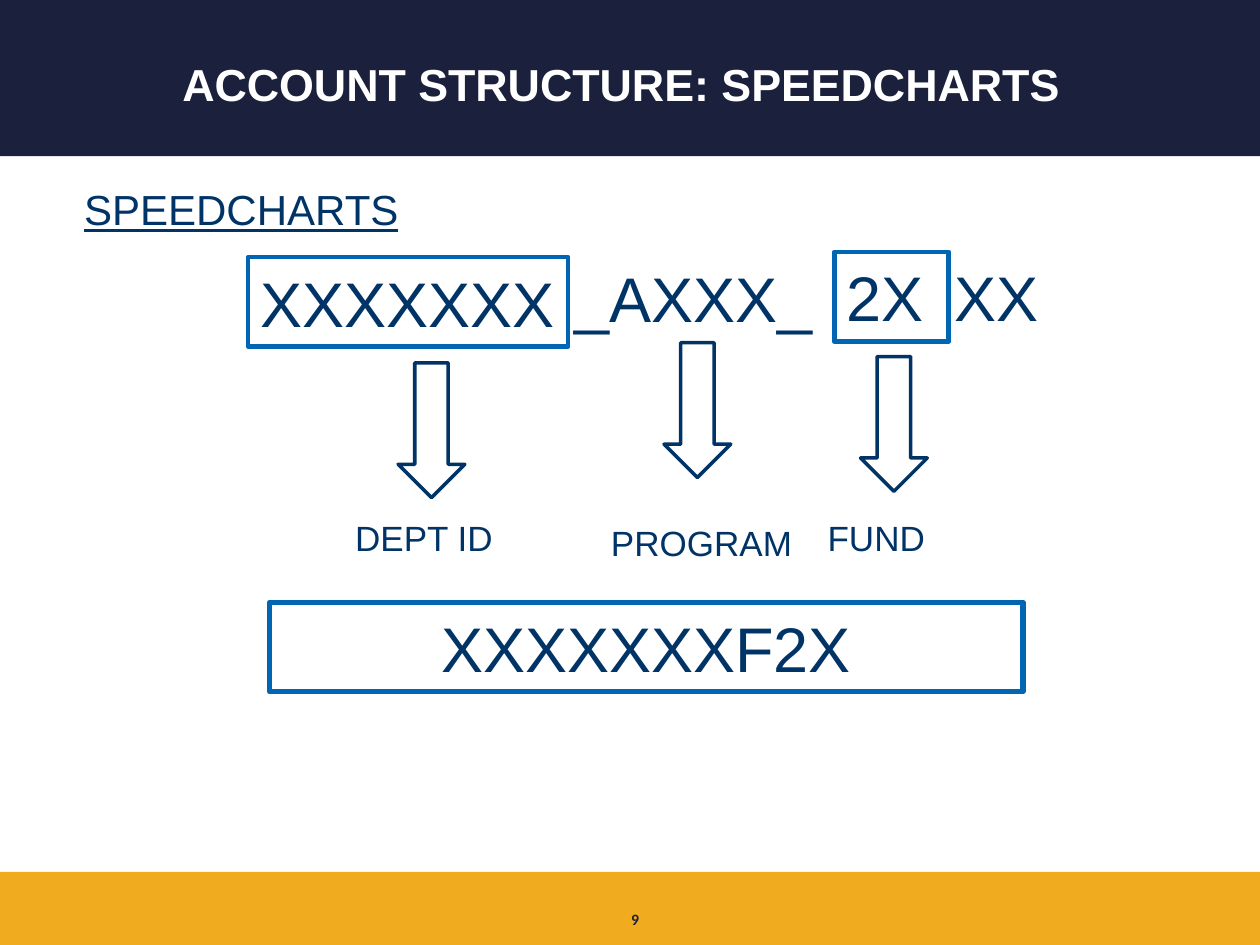
from pptx import Presentation
from pptx.dml.color import RGBColor
from pptx.enum.shapes import MSO_SHAPE
from pptx.enum.text import MSO_ANCHOR, PP_ALIGN
from pptx.util import Inches, Pt

NAVY = RGBColor(0x1B, 0x20, 0x3D)
GOLD = RGBColor(0xF1, 0xAB, 0x1F)
WHITE = RGBColor(0xFF, 0xFF, 0xFF)
INK = RGBColor(0x00, 0x33, 0x66)
BLUE = RGBColor(0x00, 0x66, 0xB3)
LEFT, CENTER = PP_ALIGN.LEFT, PP_ALIGN.CENTER

# Content: places are (left, top, width, height) in inches
TITLE = "account structure: speedcharts"
BANDS = [((0, 6.92, 10, 0.58), GOLD), ((0, 0, 10, 1.24), NAVY)]
HEADING = ("SPEEDCHARTS", (0.57, 1.41, 8.85, 0.84))
PAGE_NUMBER = ("9", (4, 7.17, 2.08, 0.33))
# Code parts: text, place, alignment, outline width in points (0 for none)
CODE_PARTS = [
    ("_AXXX_", (4.46, 2.01, 2.15, 0.71), LEFT, 0),
    ("XXXXXXXF2X", (2.14, 4.78, 5.98, 0.71), CENTER, 3),
    ("XXXXXXX", (1.97, 2.04, 2.54, 0.71), LEFT, 2.5),
    ("2X", (6.62, 2, 0.91, 0.71), LEFT, 2.75),
    ("XX", (7.48, 2, 0.91, 0.71), LEFT, 0),
]
# Fields: label, label place, alignment, arrow left and top
FIELDS = [
    ("DEPT ID", (2.31, 4.05, 2.11, 0.44), CENTER, (3.16, 2.88)),
    ("PROGRAM", (4.75, 4.09, 1.65, 0.44), LEFT, (5.27, 2.72)),
    ("FUND", (6.47, 4.05, 1.65, 0.44), LEFT, (6.83, 2.83)),
]
ARROW_SIZE = (0.53, 1.07)


def inches(place):
    return [Inches(value) for value in place]


def add_text(frame, text, size, color=INK, align=LEFT, font="Arial", bold=False):
    frame.word_wrap = True
    if align == LEFT:
        frame.margin_right = 0
    paragraph = frame.paragraphs[0]
    paragraph.alignment = align
    run = paragraph.add_run()
    run.text = text
    run.font.name = font
    run.font.size = Pt(size)
    run.font.bold = bold
    run.font.color.rgb = color
    return run


def add_label(slide, text, place, size, **style):
    box = slide.shapes.add_textbox(*inches(place))
    return add_text(box.text_frame, text, size, **style)


def add_figure(slide, kind, place, fill=None, line=None, line_width=0):
    shape = slide.shapes.add_shape(kind, *inches(place))
    shape.shadow.inherit = False
    if fill is None:
        shape.fill.background()
    else:
        shape.fill.solid()
        shape.fill.fore_color.rgb = fill
    if line is None:
        shape.line.fill.background()
    else:
        shape.line.color.rgb = line
        shape.line.width = Pt(line_width)
    return shape


def main():
    presentation = Presentation()
    presentation.slide_width, presentation.slide_height = Inches(10), Inches(7.5)
    slide = presentation.slides.add_slide(presentation.slide_layouts[5])

    # Bands, placed behind the title
    for index, (place, color) in enumerate(BANDS):
        band = add_figure(slide, MSO_SHAPE.RECTANGLE, place, fill=color)
        slide.shapes._spTree.insert(2 + index, band._element)

    # Title in small capitals
    title = slide.shapes.title
    title.left, title.top, title.width, title.height = inches((0.2, 0.09, 9.37, 1.08))
    title.text_frame.vertical_anchor = MSO_ANCHOR.MIDDLE
    space = add_text(title.text_frame, " ", 28, WHITE, CENTER, bold=True)
    words = add_text(title.text_frame, TITLE, 32, WHITE, CENTER, bold=True)
    for run in (space, words):
        run._r.get_or_add_rPr().set("cap", "small")

    # Page number and heading
    add_label(slide, *PAGE_NUMBER, 9, color=NAVY, align=CENTER, font="Calibri", bold=True)
    add_label(slide, *HEADING, 24).font.underline = True

    # Arrows and field labels
    for label, place, align, corner in FIELDS:
        add_figure(slide, MSO_SHAPE.DOWN_ARROW, corner + ARROW_SIZE, WHITE, INK, 2)
        add_label(slide, label, place, 20, align=align)

    # Speedchart code
    for text, place, align, line_width in CODE_PARTS:
        if line_width:
            box = add_figure(slide, MSO_SHAPE.RECTANGLE, place, None, BLUE, line_width)
            add_text(box.text_frame, text, 36, align=align)
        else:
            add_label(slide, text, place, 36, align=align)

    presentation.save("out.pptx")


if __name__ == "__main__":
    main()
